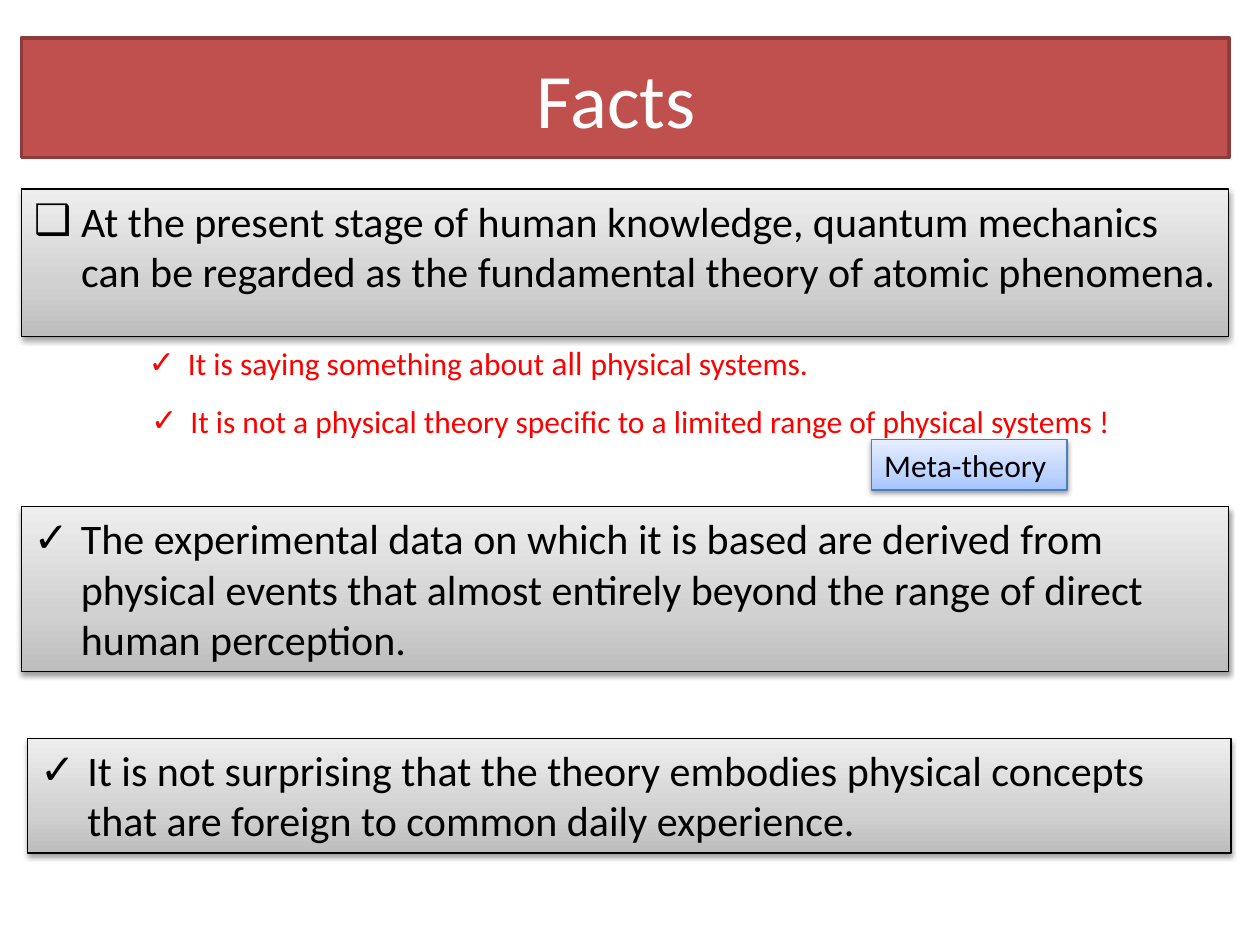
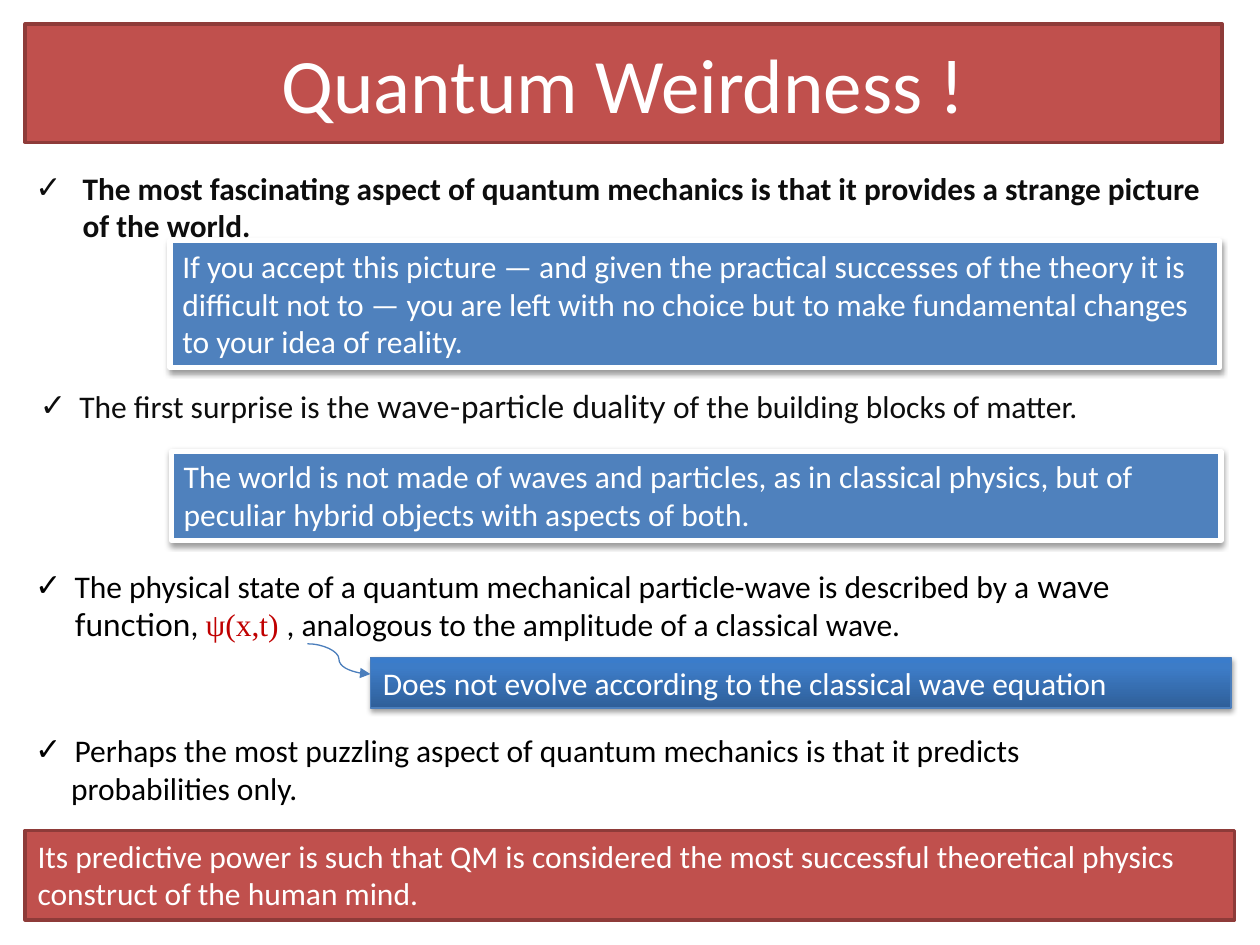
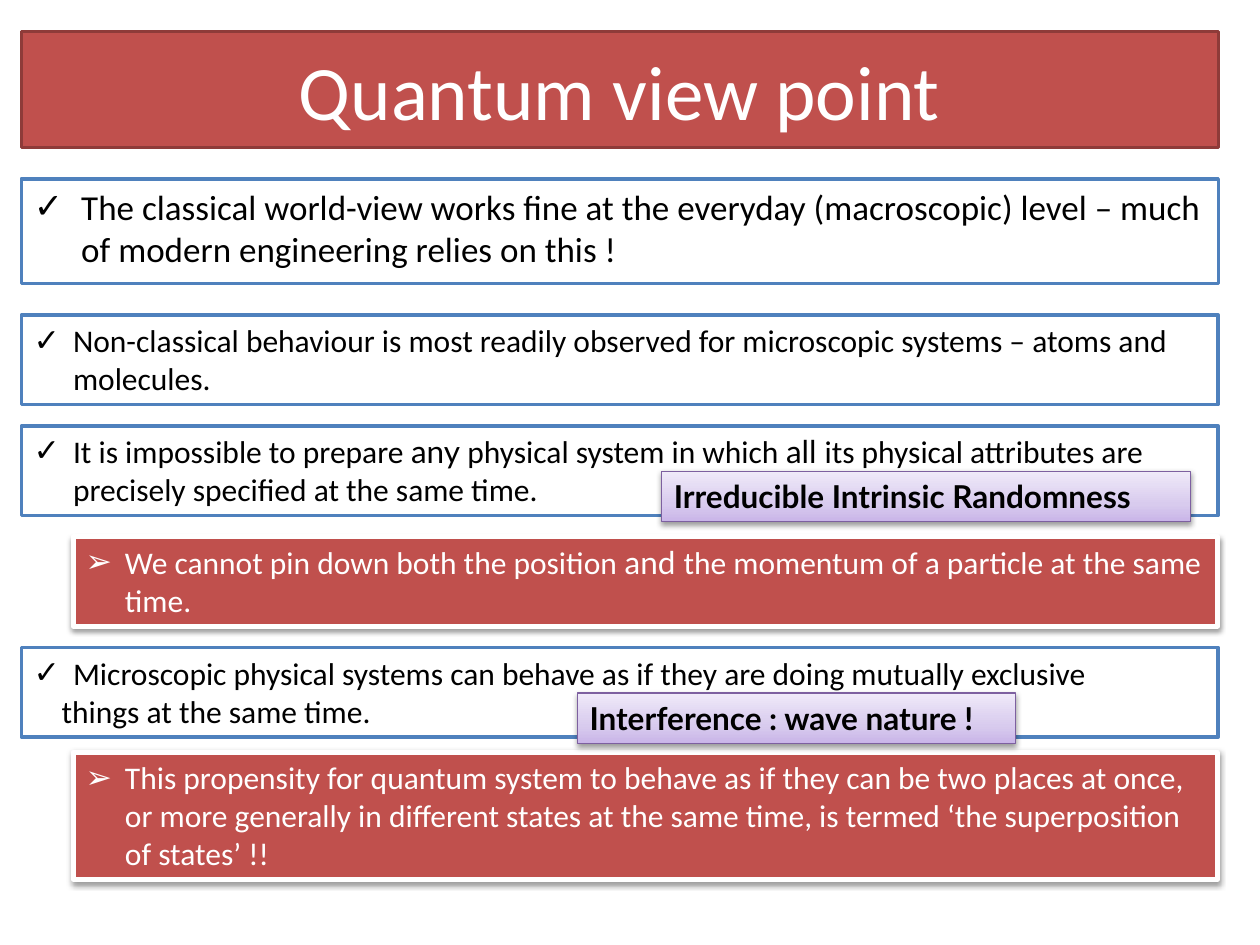
from copy import deepcopy
from dataclasses import dataclass

from lxml import etree
from pptx import Presentation
from pptx.dml.color import RGBColor
from pptx.enum import shapes, text
from pptx.oxml.ns import qn
from pptx.util import Pt


@dataclass
class Look:
    fill: object = None  # one colour, or gradient stops from bottom to top
    line: str = None
    width: float = 0.75
    ink: str = "000000"
    shade: bool = False
    font: str = "Calibri"
    bold: bool = False


class Theme:
    red, blue, white, edge = "C0504D", "4F81BD", "FFFFFF", "4B7EBC"
    wave, serif, alt = "C00000", "Times New Roman", "Lato"
    title, lead, large, body, fit = 44, 24, 20, 18, 17.9
    hang = {lead: 27, large: 27, fit: 27, body: 22.5}
    gray = ((0, "BDBDBD"), (0.35, "D1D1D1"), (1, "EEEEEE"))
    sky = ((0, "A4C4FF"), (0.35, "BFD4FF"), (1, "E6EEFF"))
    deep = ((0, "2F5F99"), (0.8, "3D7CC7"), (1, "3A7CCB"))
    lilac = ((0, "C9B5E8"), (0.35, "D8CBEE"), (1, "F0EAF9"))
    looks = {
        "band": Look(red, "8E3B39", 2, white),
        "gray": Look(gray, "000000", shade=True),
        "sky": Look(sky, edge, shade=True),
        "deep": Look(deep, edge, ink=white, shade=True),
        "tag": Look(lilac, "7D60A0", shade=True, font=alt, bold=True),
        "blue": Look(blue, white, 3, white, True),
        "red": Look(red, white, 3, white, True),
        "frame": Look(white, blue, 2),
        "plain": Look(),
        "alert": Look(ink="FF0000"),
        "soft": Look(ink="0D0D0D"),
        "bold": Look(ink="0D0D0D", bold=True),
    }


T = Theme
TICK, ARROW, SQUARE = "✓", "➢", "❑"


def add(node, tag, **attrs):
    return etree.SubElement(node, qn(tag), {k: str(v) for k, v in attrs.items()})


def style(shape, look):
    if look.fill is None:
        return
    if isinstance(look.fill, str):
        shape.fill.solid()
        shape.fill.fore_color.rgb = RGBColor.from_string(look.fill)
    else:
        shape.fill.gradient()
        shape.fill.gradient_angle = 90
        stops = shape._element.spPr.find(".//" + qn("a:gsLst"))
        stops.append(deepcopy(stops[-1]))
        for stop, (place, tint) in zip(shape.fill.gradient_stops, look.fill):
            stop.position = place
            stop.color.rgb = RGBColor.from_string(tint)
    shape.line.color.rgb = RGBColor.from_string(look.line)
    shape.line.width = Pt(look.width)
    shape.shadow.inherit = False
    if look.shade:
        effect = shape._element.spPr.find(qn("a:effectLst"))
        glow = add(effect, "a:outerShdw", blurRad=Pt(3.1), dist=Pt(1.6),
                   dir=5400000, rotWithShape=0)
        add(add(glow, "a:srgbClr", val="000000"), "a:alpha", val=38000)


# Each slide: title, title place, then items. The first item is the body.
# Item: look, place, size, bullet, paragraphs (indent, runs).
# A run is a string, or a pair of string and font.
deck = [
    ("Facts ", (12.2, 21.6, 690, 68.4), [
        ("gray", (12.2, 108, 690, 84.2), T.lead, SQUARE, [(0, [
            "At the present stage of human knowledge, quantum mechanics can be "
            "regarded as the fundamental theory of atomic phenomena."])]),
        ("gray", (12.2, 289.4, 690, 94.3), T.lead, TICK, [(0, [
            "The experimental data on which it is based are derived from physical "
            "events that almost entirely beyond the range of direct human "
            "perception."])]),
        ("gray", (15.8, 421.9, 687.6, 65.5), T.lead, TICK, [(0, [
            "It is not surprising that the theory embodies physical concepts that "
            "are foreign to common daily experience."])]),
        ("alert", (77.8, 193, 444, 28.8), T.body, TICK, [(0, [
            "It is saying something about ", ("all ", T.alt), "physical systems."])]),
        ("alert", (79.2, 226, 624, 28.8), T.body, TICK, [(0, [
            "It is not a physical theory specific to a limited range of physical "
            "systems !"])]),
        ("sky", (498.2, 251.3, 111.6, 28.8), T.body, None, [(0, ["Meta-theory"])]),
    ]),
    ("Quantum Weirdness !", (14.4, 13.7, 684, 67.7), [
        ("bold", (13, 92.9, 684, 59.8), T.fit, TICK, [(0, [
            "The most fascinating aspect of quantum mechanics is that it provides a "
            "strange picture of the world."])]),
        ("blue", (97.2, 137.5, 599.8, 72.7), T.body, None, [(0, [
            "If you accept this picture — and given the practical successes of the "
            "theory it is difficult not to — you are left with no choice but to make "
            "fundamental changes to your idea of reality."])]),
        ("soft", (15.8, 217.4, 684, 28.8), T.body, TICK, [(0, [
            "The first surprise is the ", ("wave-particle duality ", T.alt),
            "of the building blocks of matter."])]),
        ("blue", (97.9, 257.8, 599.8, 51.1), T.body, None, [(0, [
            "The world is not made of waves and particles, as in classical physics, "
            "but of peculiar hybrid objects with aspects of both."])]),
        ("plain", (13, 320.4, 682.6, 51.1), T.body, TICK, [(0, [
            "The physical state of a quantum mechanical particle-wave is described "
            "by a ", ("wave function", T.alt), ", ", ("ψ(x,t) ", T.serif),
            ", analogous to the amplitude of a classical wave."])]),
        ("deep", (211.7, 375.8, 491.8, 28.8), T.body, None, [(0, [
            "Does not evolve according to the classical wave equation"])]),
        ("plain", (13, 414, 682.6, 51.1), T.body, TICK, [
            (0, ["Perhaps the most puzzling aspect of quantum mechanics is that it "
                 "predicts"]),
            (20.5, ["probabilities only."])]),
        ("band", (14.4, 474.5, 691.2, 51.1), T.body, None, [(0, [
            "Its predictive power is such that QM is considered the most successful "
            "theoretical physics construct of the human mind."])]),
    ]),
    ("Quantum view point", (12.2, 18, 684, 66.2), [
        ("frame", (12.2, 102.2, 684, 59.8), T.large, TICK, [(0, [
            "The classical world-view works fine at the everyday (macroscopic) level "
            "– much of modern engineering relies on this !"])]),
        ("frame", (12.2, 180, 684, 51.1), T.body, TICK, [(0, [
            "Non-classical behaviour is most readily observed for microscopic "
            "systems – atoms and molecules."])]),
        ("frame", (12.2, 243.4, 684, 51.1), T.body, TICK, [(0, [
            "It is impossible to prepare ", ("any ", T.alt),
            "physical system in which ", ("all ", T.alt),
            "its physical attributes are precisely specified at the same time."])]),
        ("red", (41.8, 306.7, 653.8, 51.1), T.body, ARROW, [(0, [
            "We cannot pin down both the position ", ("and ", T.alt),
            "the momentum of a particle at the same time."])]),
        ("frame", (12.2, 370, 684, 51.1), T.body, TICK, [
            (0, ["Microscopic physical systems can behave as if they are doing "
                 "mutually exclusive"]),
            (16, ["things at the same time."])]),
        ("red", (41.8, 429.8, 653.8, 72.7), T.body, ARROW, [(0, [
            "This propensity for quantum system to behave as if they can be two "
            "places at once, or more generally in different states at the same time, "
            "is termed ‘the superposition of states’ !!"])]),
        ("tag", (378, 269.3, 302.4, 28.8), T.body, None, [(0, [
            "Irreducible Intrinsic Randomness"])]),
        ("tag", (329.8, 396, 250.6, 28.8), T.body, None, [(0, [
            "Interference : wave nature !"])]),
    ]),
]

prs = Presentation()
prs.slide_width, prs.slide_height = Pt(720), Pt(540)

for name, spot, items in deck:
    slide = prs.slides.add_slide(prs.slide_layouts[1])

    # Title band
    head = slide.shapes.title
    head.left, head.top, head.width, head.height = map(Pt, spot)
    band = T.looks["band"]
    style(head, band)
    head.text_frame.text = name
    font = head.text_frame.paragraphs[0].font
    font.name, font.size = band.font, Pt(T.title)
    font.color.rgb = RGBColor.from_string(band.ink)

    # Body and boxes
    for n, (kind, place, size, mark, paras) in enumerate(items):
        look = T.looks[kind]
        place = [Pt(v) for v in place]
        if n == 0:
            box = slide.placeholders[1]
            box.left, box.top, box.width, box.height = place
        elif look.fill:
            box = slide.shapes.add_shape(shapes.MSO_SHAPE.RECTANGLE, *place)
        else:
            box = slide.shapes.add_textbox(*place)
        style(box, look)
        frame = box.text_frame
        frame.word_wrap = True
        frame.auto_size = text.MSO_AUTO_SIZE.NONE
        frame.vertical_anchor = text.MSO_ANCHOR.TOP

        for i, (indent, runs) in enumerate(paras):
            para = frame.add_paragraph() if i else frame.paragraphs[0]
            para.alignment = text.PP_ALIGN.LEFT
            props = para._p.get_or_add_pPr()
            if mark and not indent:
                hang = Pt(T.hang[size])
                props.set("marL", str(hang))
                props.set("indent", str(-hang))
                add(props, "a:buFont", typeface="Arial")
                add(props, "a:buChar", char=mark)
            elif indent:
                props.set("marL", str(Pt(indent)))
            font = para.font
            font.name, font.size, font.bold = look.font, Pt(size), look.bold
            font.color.rgb = RGBColor.from_string(look.ink)
            for part in runs:
                run = para.add_run()
                if isinstance(part, str):
                    run.text = part
                    continue
                run.text, run.font.name = part
                if run.font.name == T.serif:
                    run.font.color.rgb = RGBColor.from_string(T.wave)

# Arrow from the wave function to its remark
arrow = prs.slides[1].shapes.add_connector(
    shapes.MSO_CONNECTOR.CURVE, Pt(175.7), Pt(367.9), Pt(211.7), Pt(385.2))
arrow.line.color.rgb = RGBColor.from_string(T.edge)
arrow.line.width = Pt(0.75)
add(arrow.line._get_or_add_ln(), "a:tailEnd", type="triangle")
add(arrow._element.spPr, "a:effectLst")

prs.save("out.pptx")
